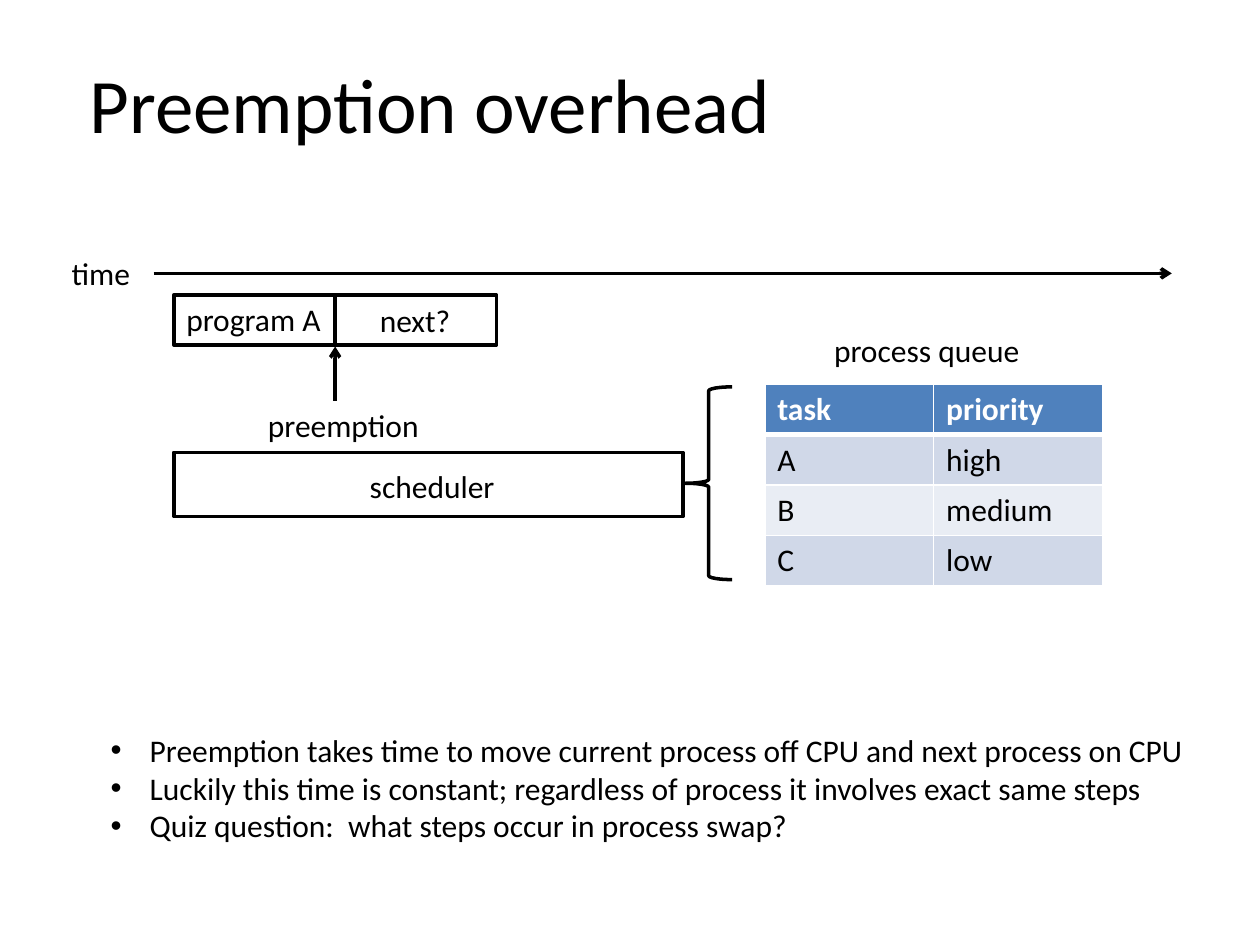
from lxml import etree
from pptx import Presentation
from pptx.dml.color import RGBColor
from pptx.enum.shapes import MSO_CONNECTOR, MSO_SHAPE
from pptx.enum.text import MSO_ANCHOR, MSO_AUTO_SIZE, PP_ALIGN
from pptx.oxml.ns import qn
from pptx.util import Inches, Pt

LEFT, CENTER = PP_ALIGN.LEFT, PP_ALIGN.CENTER
TOP = MSO_ANCHOR.TOP
FIT_SHAPE = MSO_AUTO_SIZE.SHAPE_TO_FIT_TEXT
RECTANGLE, BRACE = MSO_SHAPE.RECTANGLE, MSO_SHAPE.RIGHT_BRACE
STRAIGHT = MSO_CONNECTOR.STRAIGHT
TITLE_ONLY = 5

COLUMNS, ROWS = 100, 75
COLORS = {
    "ink": "000000",
    "paper": "FFFFFF",
    "header": "4F81BD",
    "odd": "D0D8E8",
    "even": "E9EDF4",
}


def color(name):
    return RGBColor.from_string(COLORS[name])


class SlideBuilder:
    """Draws on one slide; lengths are columns and rows of a 100 by 75 grid."""

    font, text_size, title_size, line_width = "Calibri", 18, 44, 2

    def __init__(self, deck):
        self.deck = deck
        self.page = deck.slides.add_slide(deck.slide_layouts[TITLE_ONLY])

    def grid(self, column, row):
        return (round(self.deck.slide_width * column / COLUMNS),
                round(self.deck.slide_height * row / ROWS))

    def frame(self, left, top, width, height):
        return *self.grid(left, top), *self.grid(width, height)

    def style(self, para, size=None, ink="ink", bold=False):
        para.font.name = self.font
        para.font.size = Pt(size or self.text_size)
        para.font.color.rgb = color(ink)
        para.font.bold = bold

    def fill_text(self, box, lines, align, size=None):
        text = box.text_frame
        text.text = "\n".join(lines)
        text.word_wrap = False
        text.auto_size = FIT_SHAPE
        text.vertical_anchor = TOP
        for para in text.paragraphs:
            para.alignment = align
            self.style(para, size)
        return text.paragraphs

    def title(self, words, *place):
        box = self.page.shapes.title
        box.left, box.top, box.width, box.height = self.frame(*place)
        self.fill_text(box, [words], LEFT, self.title_size)

    def label(self, words, *place, align=CENTER):
        box = self.page.shapes.add_textbox(*self.frame(*place))
        self.fill_text(box, [words], align)

    def bullets(self, lines, *place, indent=3.1):
        box = self.page.shapes.add_textbox(*self.frame(*place))
        step = self.grid(indent, 0)[0]
        for para in self.fill_text(box, lines, LEFT):
            props = para._p.get_or_add_pPr()
            props.set("marL", str(step))
            props.set("indent", str(-step))
            mark_font = etree.Element(qn("a:buFont"), typeface="Arial")
            mark = etree.Element(qn("a:buChar"), char="•")
            props.insert(0, mark_font)
            mark_font.addnext(mark)

    def outline(self, kind, *place, rotation=0):
        shape = self.page.shapes.add_shape(kind, *self.frame(*place))
        shape.rotation = rotation
        shape.shadow.inherit = False
        shape.fill.background()
        shape.line.color.rgb = color("ink")
        shape.line.width = Pt(self.line_width)

    def arrow(self, start, end):
        line = self.page.shapes.add_connector(
            STRAIGHT, *self.grid(*start), *self.grid(*end))
        line.line.color.rgb = color("ink")
        line.line.width = Pt(self.line_width)
        etree.SubElement(line.line._get_or_add_ln(), qn("a:tailEnd"), type="arrow")
        etree.SubElement(line._element.spPr, qn("a:effectLst"))

    def borders(self, cell, widths):
        props = cell._tc.get_or_add_tcPr()
        for side, width in widths.items():
            edge = etree.SubElement(props, qn(f"a:ln{side}"), w=str(Pt(width)))
            solid = etree.SubElement(edge, qn("a:solidFill"))
            etree.SubElement(solid, qn("a:srgbClr"), val=COLORS["paper"])

    def table(self, records, *place):
        table = self.page.shapes.add_table(
            len(records), len(records[0]), *self.frame(*place)).table
        for row, record in enumerate(records):
            header = row == 0
            fill = "header" if header else ("odd" if row % 2 else "even")
            widths = {"L": 1, "R": 1, "T": 3 if row == 1 else 1,
                      "B": 3 if header else 1}
            for column, words in enumerate(record):
                cell = table.cell(row, column)
                cell.text = words
                self.borders(cell, widths)
                cell.fill.solid()
                cell.fill.fore_color.rgb = color(fill)
                self.style(cell.text_frame.paragraphs[0],
                           ink="paper" if header else "ink", bold=header)


def main():
    deck = Presentation()
    deck.slide_width, deck.slide_height = Inches(10), Inches(7.5)
    slide = SlideBuilder(deck)
    slide.title("Preemption overhead", 6.1, 4, 56.7, 8.4)

    # Timeline with the two time slices
    slice_left, slice_top, slice_width, slice_height = 13.8, 23.4, 12.8, 4
    switch = slice_left + slice_width
    slide.label("time", 4.7, 19.7, 6.7, 4, align=LEFT)
    slide.arrow((12.2, 21.7), (93, 21.7))
    for left in (slice_left, switch):
        slide.outline(RECTANGLE, left, slice_top, slice_width, slice_height)
    slide.label("program A", slice_left, 23.3, slice_width, 4, align=LEFT)
    slide.label("next?", 29.1, slice_top, 7.7, 4)
    slide.arrow((switch, 31.8), (switch, 27.5))
    slide.label("preemption", 20.2, 31.7, 14.1, 4)

    # Scheduler reading the process queue
    slide.outline(RECTANGLE, slice_left, 35.9, 40.4, 5.1)
    slide.label("scheduler", 28.3, 36.6, 12, 4)
    slide.outline(BRACE, 54.4, 30.7, 3.7, 15.3, rotation=180)
    slide.label("process queue", 65.1, 25.8, 16.9, 4)
    slide.table([("task", "priority"), ("A", "high"), ("B", "medium"), ("C", "low")],
                60.7, 30.5, 26.8, 16)

    slide.bullets([
        "Preemption takes time to move current process off CPU and next process on CPU",
        "Luckily this time is constant; regardless of process it involves exact same steps",
        "Quiz question:  what steps occur in process swap?",
    ], 7.8, 57.5, 88.2, 10.1)
    deck.save("out.pptx")


if __name__ == "__main__":
    main()
